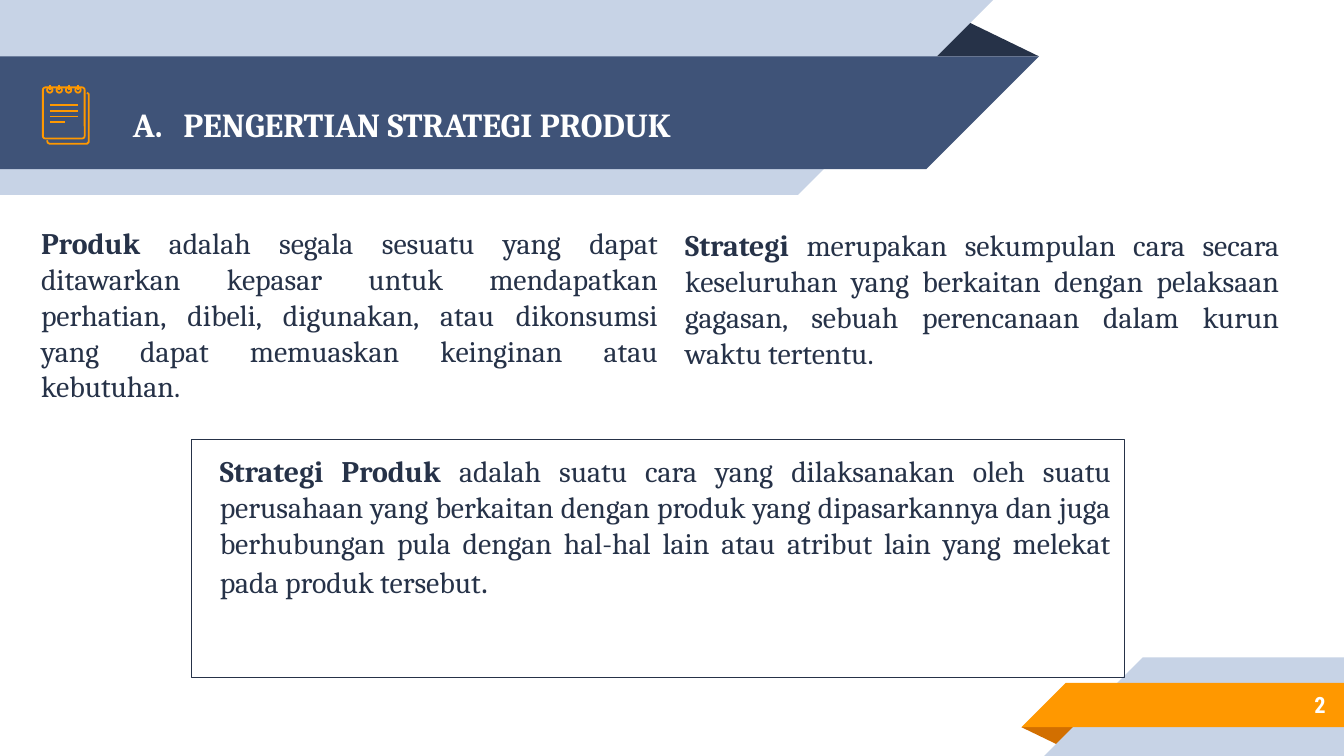
from dataclasses import dataclass

from lxml.etree import SubElement
from pptx import Presentation
from pptx.dml.color import RGBColor
from pptx.enum.shapes import MSO_CONNECTOR, MSO_SHAPE
from pptx.enum.text import MSO_ANCHOR, PP_ALIGN
from pptx.oxml.ns import qn
from pptx.util import Pt


@dataclass(frozen=True)
class Theme:
    ink: RGBColor = RGBColor.from_string("263248")
    navy: RGBColor = RGBColor.from_string("3F5378")
    pale: RGBColor = RGBColor.from_string("C7D3E6")
    orange: RGBColor = RGBColor.from_string("FF9800")
    rust: RGBColor = RGBColor.from_string("D26F00")
    white: RGBColor = RGBColor.from_string("FFFFFF")
    serif: str = "Cambria"
    condensed: str = "Roboto Condensed"
    title: int = 18
    body: int = 16
    number: int = 12
    icon_line: float = 0.96


theme = Theme()
presentation = Presentation()
presentation.slide_width = Pt(720)
presentation.slide_height = Pt(405)
slide = presentation.slides.add_slide(presentation.slide_layouts[6])


def add_outline(points, closed=True):
    corners = [(Pt(x), Pt(y)) for x, y in points]
    builder = slide.shapes.build_freeform(*corners[0])
    builder.add_line_segments(corners[1:], close=closed)
    outline = builder.convert_to_shape()
    outline.shadow.inherit = False
    return outline


def add_text(box, runs, color, font=theme.serif, align=PP_ALIGN.JUSTIFY, anchor=MSO_ANCHOR.TOP):
    """Add a text box; each run is (text, size, bold)."""
    area = slide.shapes.add_textbox(*[Pt(value) for value in box])
    frame = area.text_frame
    frame.word_wrap = True
    frame.vertical_anchor = anchor
    frame.margin_left = frame.margin_right = Pt(7.2)
    frame.margin_top = frame.margin_bottom = Pt(7.2)
    paragraph = frame.paragraphs[0]
    paragraph.alignment = align
    for text, size, bold in runs:
        run = paragraph.add_run()
        run.text = text
        run.font.name = font
        run.font.size = Pt(size)
        run.font.bold = bold
        run.font.color.rgb = color
    return area


# Ribbons at the top and in the lower right corner, back to front
ribbons = [
    (theme.ink, [(495.4, 30.2), (515.2, 10.1), (556.6, 30.2)]),
    (theme.pale, [(0, 0), (532, 0), (427.6, 104.4), (0, 104.4)]),
    (theme.navy, [(0, 30.2), (556.6, 30.2), (496.2, 90.6), (0, 90.6)]),
    (theme.rust, [(547.2, 389.6), (578.2, 389.6), (568.1, 399.7)]),
    (theme.pale, [(612.2, 352.2), (720, 352.2), (720, 405), (559.4, 405)]),
    (theme.orange, [(571, 365.8), (720, 365.8), (720, 389.6), (547.2, 389.6)]),
]
for color, points in ribbons:
    ribbon = add_outline(points)
    ribbon.fill.solid()
    ribbon.fill.fore_color.rgb = color
    ribbon.line.fill.background()

# Title with a lettered number
title = add_text((64.1, 31, 414, 60.5), [("PENGERTIAN STRATEGI PRODUK", theme.title, True)],
                 theme.white, anchor=MSO_ANCHOR.MIDDLE)
heading = title.text_frame.paragraphs[0]
heading.line_spacing = 1.5
properties = heading._p.get_or_add_pPr()
properties.set("marL", str(Pt(27)))
properties.set("indent", str(-Pt(27)))
bullet_color = SubElement(properties, qn("a:buClr"))
SubElement(bullet_color, qn("a:srgbClr"), val=str(theme.white))
SubElement(properties, qn("a:buFont"), typeface=theme.serif)
SubElement(properties, qn("a:buAutoNum"), type="alphaUcPeriod")

# Definitions
definitions = [
    ((360, 114.5, 332.6, 100), [
        ("Strategi ", theme.body, True),
        ("merupakan sekumpulan cara secara keseluruhan yang berkaitan dengan pelaksaan "
         "gagasan, sebuah perencanaan dalam kurun waktu tertentu.", theme.body, False)]),
    ((14.9, 113.2, 344.9, 114.5), [
        ("Produk ", theme.body, True),
        ("adalah segala sesuatu yang dapat ditawarkan kepasar untuk mendapatkan perhatian, "
         "dibeli, digunakan, atau dikonsumsi yang dapat memuaskan keinginan atau kebutuhan.",
         theme.body, False)]),
    ((102.7, 235.4, 499.8, 127.5), [
        ("Strategi Produk ", theme.body, True),
        ("adalah suatu cara yang dilaksanakan oleh suatu perusahaan yang berkaitan dengan "
         "produk yang dipasarkannya dan juga berhubungan pula dengan hal-hal lain atau atribut "
         "lain yang melekat pada produk tersebut", theme.body, False),
        (". ", theme.title, False)]),
]
for box, runs in definitions:
    definition = add_text(box, runs, theme.ink)

# The last definition, the conclusion, is framed and indented
definition.line.color.rgb = theme.ink
definition.line.width = Pt(0.75)
definition.text_frame.paragraphs[0]._p.get_or_add_pPr().set("marL", str(Pt(8)))

# Page number
add_text((599.8, 365, 117.4, 25.2), [("2", theme.number, True)], theme.white,
         theme.condensed, PP_ALIGN.RIGHT, MSO_ANCHOR.MIDDLE)

# Notepad icon: back page, front page, rings
icon_parts = [add_outline([(25.2, 75.2), (25.6, 76.5), (26.6, 77), (46.6, 77), (47.5, 76.1),
                           (47.5, 50.4), (46.6, 49.6)], closed=False)]
front_page = slide.shapes.add_shape(MSO_SHAPE.ROUNDED_RECTANGLE, Pt(23), Pt(46.8), Pt(22.4), Pt(27.4))
front_page.adjustments[0] = 0.06
icon_parts.append(front_page)
ring_centers = [26.7 + 5.04 * i for i in range(4)]
for x in ring_centers:
    icon_parts.append(slide.shapes.add_shape(
        MSO_SHAPE.OVAL, Pt(x - 1.45), Pt(46.8), Pt(2.9), Pt(2.9)))
for part in icon_parts:
    part.shadow.inherit = False
    part.fill.background()

# Notepad icon: pins and written lines
strokes = [(x, 45.4, x, 48.3) for x in ring_centers]
strokes += [(26.7, 56.2 + 3.1 * i, right, 56.2 + 3.1 * i)
            for i, right in enumerate([41.8, 41.8, 41.8, 34.6])]
for stroke in strokes:
    connector = slide.shapes.add_connector(MSO_CONNECTOR.STRAIGHT, *[Pt(value) for value in stroke])
    icon_parts.append(connector)
for part in icon_parts:
    part.line.color.rgb = theme.orange
    part.line.width = Pt(theme.icon_line)
for connector in icon_parts[-len(strokes):]:
    SubElement(connector._element.spPr, qn("a:effectLst"))

presentation.save("out.pptx")
